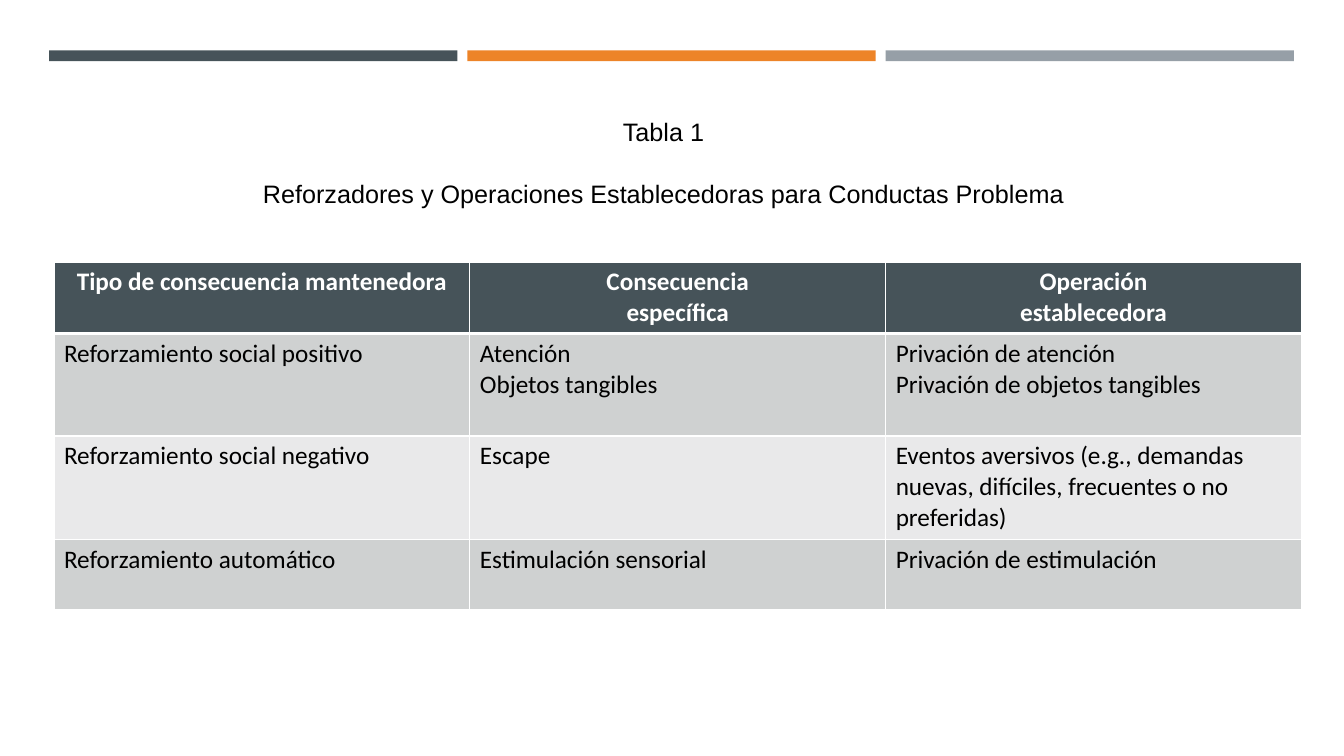
from lxml import etree
from pptx import Presentation
from pptx.dml.color import RGBColor
from pptx.enum import shapes, text
from pptx.oxml import ns
from pptx.util import Cm, Pt

SLATE, ORANGE, GREY = "465359", "ED8428", "969FA7"
BAND_DARK, BAND_LIGHT = "CFD1D1", "E9E9EA"
WHITE, BLACK = "FFFFFF", "000000"

TITLE = ["Tabla 1",
         "Reforzadores y Operaciones Establecedoras para Conductas Problema"]
ROWS = [
    ["Tipo de consecuencia mantenedora", "Consecuencia\nespecífica",
     "Operación\nestablecedora"],
    ["Reforzamiento social positivo", "Atención\nObjetos tangibles",
     "Privación de atención\nPrivación de objetos tangibles"],
    ["Reforzamiento social negativo", "Escape",
     "Eventos aversivos (e.g., demandas nuevas, difíciles, frecuentes "
     "o no preferidas)"],
    ["Reforzamiento automático", "Estimulación sensorial",
     "Privación de estimulación"],
]
ROW_HEIGHTS = [1.8, 2.58, 2.6, 1.78]
COL_WIDTH = 10.48


def set_fill(obj, color):
    obj.fill.solid()
    obj.fill.fore_color.rgb = RGBColor.from_string(color)


def set_font(font, color, **values):
    for name, value in values.items():
        setattr(font, name, value)
    font.color.rgb = RGBColor.from_string(color)


def write(tf, lines, align, color, gap=0, **font):
    """Write one paragraph per line, with a gap between paragraphs."""
    for i, line in enumerate(lines):
        p = tf.paragraphs[0] if i == 0 else tf.add_paragraph()
        p.alignment = align
        p.space_before = Pt(gap if i else 0)
        r = p.add_run()
        r.text = line
        set_font(r.font, color, **font)


def set_borders(cell, bottom=1, top=1):
    tc_pr = cell._tc.get_or_add_tcPr()
    widths = {"lnL": 1, "lnR": 1, "lnT": top, "lnB": bottom}
    for i, (tag, width) in enumerate(widths.items()):
        ln = etree.Element(ns.qn("a:" + tag), w=str(Pt(width)))
        fill = etree.SubElement(ln, ns.qn("a:solidFill"))
        etree.SubElement(fill, ns.qn("a:srgbClr"), val=WHITE)
        tc_pr.insert(i, ln)


def add_bar(slide, left, color):
    sp = slide.shapes.add_shape(shapes.MSO_SHAPE.RECTANGLE,
                                Cm(left), Cm(1.27), Cm(10.29), Cm(0.27))
    sp.shadow.inherit = False
    set_fill(sp, color)
    sp.line.fill.background()


def format_title(sp):
    box = {"left": 1.2, "top": 2.8, "width": 31.04, "height": 2.57}
    for name, value in box.items():
        setattr(sp, name, Cm(value))
    tf = sp.text_frame
    frame = {"word_wrap": True, "auto_size": text.MSO_AUTO_SIZE.NONE,
             "vertical_anchor": text.MSO_ANCHOR.TOP}
    for name, value in frame.items():
        setattr(tf, name, value)
    write(tf, TITLE, text.PP_ALIGN.CENTER, BLACK, gap=22.5,
          name="Arial", size=Pt(18))


def add_reinforcer_table(slide):
    columns = len(ROWS[0])
    table = slide.shapes.add_table(
        len(ROWS), columns, Cm(1.36), Cm(6.6),
        Cm(COL_WIDTH * columns), Cm(sum(ROW_HEIGHTS))).table
    for col in table.columns:
        col.width = Cm(COL_WIDTH)
    for i, row in enumerate(ROWS):
        table.rows[i].height = Cm(ROW_HEIGHTS[i])
        header = i == 0
        band = SLATE if header else BAND_DARK if i % 2 else BAND_LIGHT
        align = text.PP_ALIGN.CENTER if header else text.PP_ALIGN.LEFT
        for j, content in enumerate(row):
            cell = table.cell(i, j)
            set_fill(cell, band)
            set_borders(cell, bottom=3 if header else 1, top=3 if i == 1 else 1)
            write(cell.text_frame, content.split("\n"), align,
                  WHITE if header else BLACK,
                  name="Calibri", size=Pt(18), bold=header)


def main():
    prs = Presentation()
    prs.slide_width, prs.slide_height = Cm(33.87), Cm(19.05)
    slide = prs.slides.add_slide(prs.slide_layouts[5])

    # Coloured bars along the top
    for i, color in enumerate([SLATE, ORANGE, GREY]):
        add_bar(slide, 1.24 + i * 10.54, color)

    # Title and table
    format_title(slide.shapes.title)
    add_reinforcer_table(slide)

    prs.save("out.pptx")


if __name__ == "__main__":
    main()
